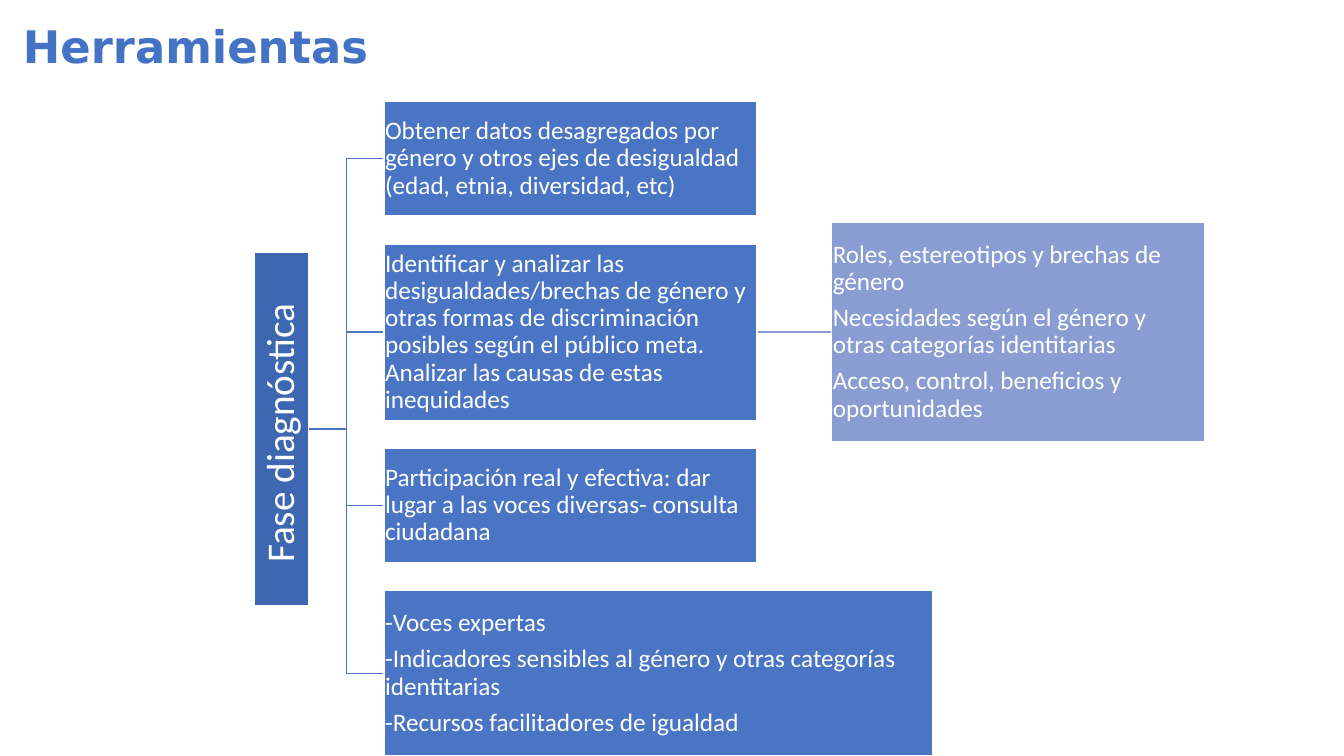
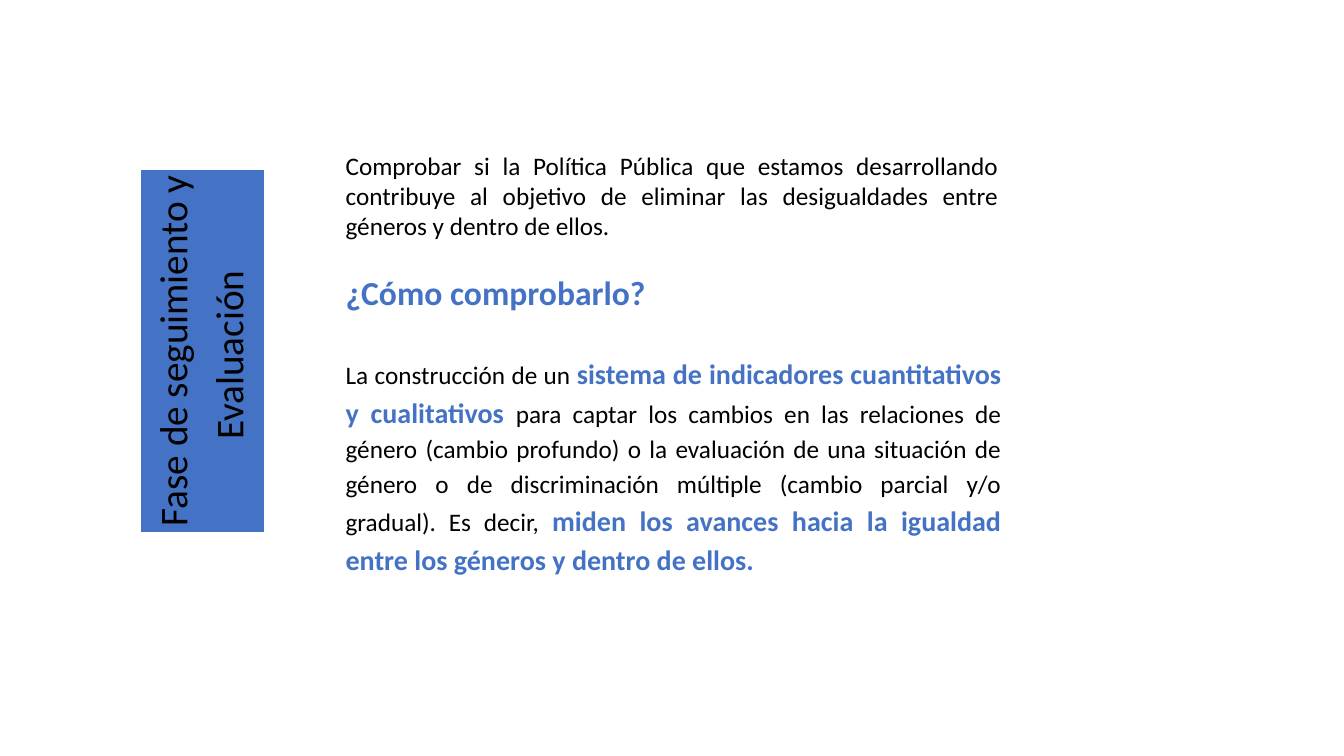
from dataclasses import dataclass

from lxml.etree import SubElement
from pptx import Presentation
from pptx.dml.color import RGBColor
from pptx.enum.shapes import MSO_CONNECTOR, MSO_SHAPE
from pptx.enum.text import MSO_ANCHOR, PP_ALIGN
from pptx.oxml.ns import qn
from pptx.util import Emu, Pt

COLORS = {
    "accent": "4472C4",
    "phase": "3E67B2",
    "step": "4A75C5",
    "detail": "899DD2",
    "white": "FFFFFF",
    "black": "000000",
}
BODY_FONT = "Calibri"
TITLE_FONT = "DejaVu Sans"
EMU_PER_PX = 9144  # 100 px to the inch
PAGE_WIDTH, PAGE_HEIGHT = 1333, 750


@dataclass
class Box:
    left: int
    top: int
    width: int
    height: int

    @property
    def right(self):
        return self.left + self.width

    @property
    def middle(self):
        return self.top + self.height / 2


def px(length):
    return Emu(int(length * EMU_PER_PX))


def frame(box):
    return [px(side) for side in (box.left, box.top, box.width, box.height)]


def color(name):
    return RGBColor.from_string(COLORS[name])


def add_span(para, text, size, tint, bold=False, font=BODY_FONT):
    span = para.add_run()
    span.text = text
    span.font.name = font
    span.font.size = Pt(size)
    span.font.bold = bold
    span.font.color.rgb = color(tint)


def next_para(text_frame, index):
    return text_frame.add_paragraph() if index else text_frame.paragraphs[0]


def add_text_box(page, box):
    text_frame = page.shapes.add_textbox(*frame(box)).text_frame
    text_frame.word_wrap = True
    return text_frame


def add_title(page, box, text):
    text_frame = add_text_box(page, box)
    text_frame.vertical_anchor = MSO_ANCHOR.BOTTOM
    para = text_frame.paragraphs[0]
    para.line_spacing = 0.9
    add_span(para, text, 32, "accent", True, TITLE_FONT)


def add_panel(page, box, fill, lines, size=18, tint="white", inset=1,
              align=PP_ALIGN.LEFT):
    panel = page.shapes.add_shape(MSO_SHAPE.RECTANGLE, *frame(box))
    panel.shadow.inherit = False
    panel.fill.solid()
    panel.fill.fore_color.rgb = color(fill)
    panel.line.color.rgb = color("white")
    panel.line.width = Pt(1)
    text_frame = panel.text_frame
    text_frame.word_wrap = True
    text_frame.vertical_anchor = MSO_ANCHOR.MIDDLE
    text_frame.margin_left = text_frame.margin_right = px(inset)
    text_frame.margin_top = text_frame.margin_bottom = px(inset)
    for index, line in enumerate(lines):
        para = next_para(text_frame, index)
        para.alignment = align
        para.line_spacing = 0.9
        para.space_after = Pt(size * 0.35)
        add_span(para, line, size, tint)
    return panel


def add_phase_band(page, box, fill, lines, tint):
    """Fill the upright box with a panel whose text reads upwards."""
    shift = (box.width - box.height) / 2
    lying = Box(box.left + shift, box.top - shift, box.height, box.width)
    panel = add_panel(page, lying, fill, lines, 28, tint, 2, PP_ALIGN.CENTER)
    panel.rotation = 270


def add_link(page, source, target, tint):
    level = source.middle == target.middle
    kind = MSO_CONNECTOR.STRAIGHT if level else MSO_CONNECTOR.ELBOW
    link = page.shapes.add_connector(
        kind, px(source.right), px(source.middle),
        px(target.left), px(target.middle))
    link.line.color.rgb = color(tint)
    link.line.width = Pt(1)
    SubElement(link._element.spPr, qn("a:effectLst"))


def add_step_tree(page, box, phase, steps, details, parent_index):
    """Phase band, a column of steps, and details beside one step."""
    gap, column = 28, 370
    band = Box(box.left, box.top + 149, 54, 351)
    step_left = band.right + 75

    # Places of the steps and of the details
    step_boxes = []
    top = box.top
    for width, height, _ in steps:
        step_boxes.append(Box(step_left, top, width, height))
        top += height + gap
    parent = step_boxes[parent_index]
    detail_height = 217
    detail_box = Box(box.right - column, parent.middle - detail_height / 2,
                     column, detail_height)

    # Links lie behind the panels
    for step_box in step_boxes:
        add_link(page, band, step_box, "step")
    add_link(page, parent, detail_box, "detail")

    # Panels
    add_phase_band(page, band, "phase", [phase], "white")
    for step_box, (_, _, lines) in zip(step_boxes, steps):
        add_panel(page, step_box, "step", lines)
    add_panel(page, detail_box, "detail", details)


def add_question(page, box, statement, question):
    text_frame = add_text_box(page, box)
    spans = [(statement, 18, "black", False), (question, 24, "accent", True)]
    for index, span in enumerate(spans):
        para = next_para(text_frame, index)
        para.alignment = PP_ALIGN.JUSTIFY
        para.space_before = Pt(22 * index)
        add_span(para, *span)


def add_answer(page, box, parts):
    para = add_text_box(page, box).paragraphs[0]
    para.alignment = PP_ALIGN.JUSTIFY
    para.line_spacing = 1.15
    para.space_before = para.space_after = Pt(12)
    for text, strong in parts:
        style = (20, "accent", True) if strong else (18, "black", False)
        add_span(para, text, *style)


def build_tools_page(page):
    add_title(page, Box(13, 0, 650, 78), "Herramientas")
    steps = [
        (370, 113, ["Obtener datos desagregados por género y otros ejes de "
                    "desigualdad (edad, etnia, diversidad, etc)"]),
        (370, 175, ["Identificar y analizar las desigualdades/brechas de "
                    "género y otras formas de discriminación posibles según "
                    "el público meta. Analizar las causas de estas "
                    "inequidades"]),
        (370, 113, ["Participación real y efectiva: dar lugar a las voces "
                    "diversas- consulta ciudadana"]),
        (544, 164, ["-Voces expertas",
                    "-Indicadores sensibles al género y otras categorías "
                    "identitarias",
                    "-Recursos facilitadores de igualdad"]),
    ]
    details = [
        "Roles, estereotipos y brechas de género",
        "Necesidades según el género y otras categorías identitarias",
        "Acceso, control, beneficios y oportunidades",
    ]
    add_step_tree(page, Box(252, 101, 943, 649), "Fase diagnóstica ",
                  steps, details, 1)


def build_evaluation_page(page):
    add_phase_band(page, Box(139, 168, 124, 360), "accent",
                   ["Fase de seguimiento y ", "Evaluación "], "black")
    add_question(
        page, Box(333, 144, 667, 172),
        "Comprobar si la Política Pública que estamos desarrollando "
        "contribuye al objetivo de eliminar las desigualdades entre géneros "
        "y dentro de ellos. ",
        "¿Cómo comprobarlo? ")
    add_answer(page, Box(333, 344, 670, 232), [
        ("La construcción de un ", False),
        ("sistema de indicadores cuantitativos y cualitativos ", True),
        ("para captar los cambios en las relaciones de género (cambio "
         "profundo) o la evaluación de una situación de género o de "
         "discriminación múltiple (cambio parcial y/o gradual). Es decir, ",
         False),
        ("miden los avances hacia la igualdad entre los géneros y dentro "
         "de ellos. ", True),
    ])


def main():
    deck = Presentation()
    deck.slide_width = px(PAGE_WIDTH)
    deck.slide_height = px(PAGE_HEIGHT)
    blank = deck.slide_layouts[6]
    for build in (build_tools_page, build_evaluation_page):
        build(deck.slides.add_slide(blank))
    deck.save("out.pptx")


if __name__ == "__main__":
    main()
